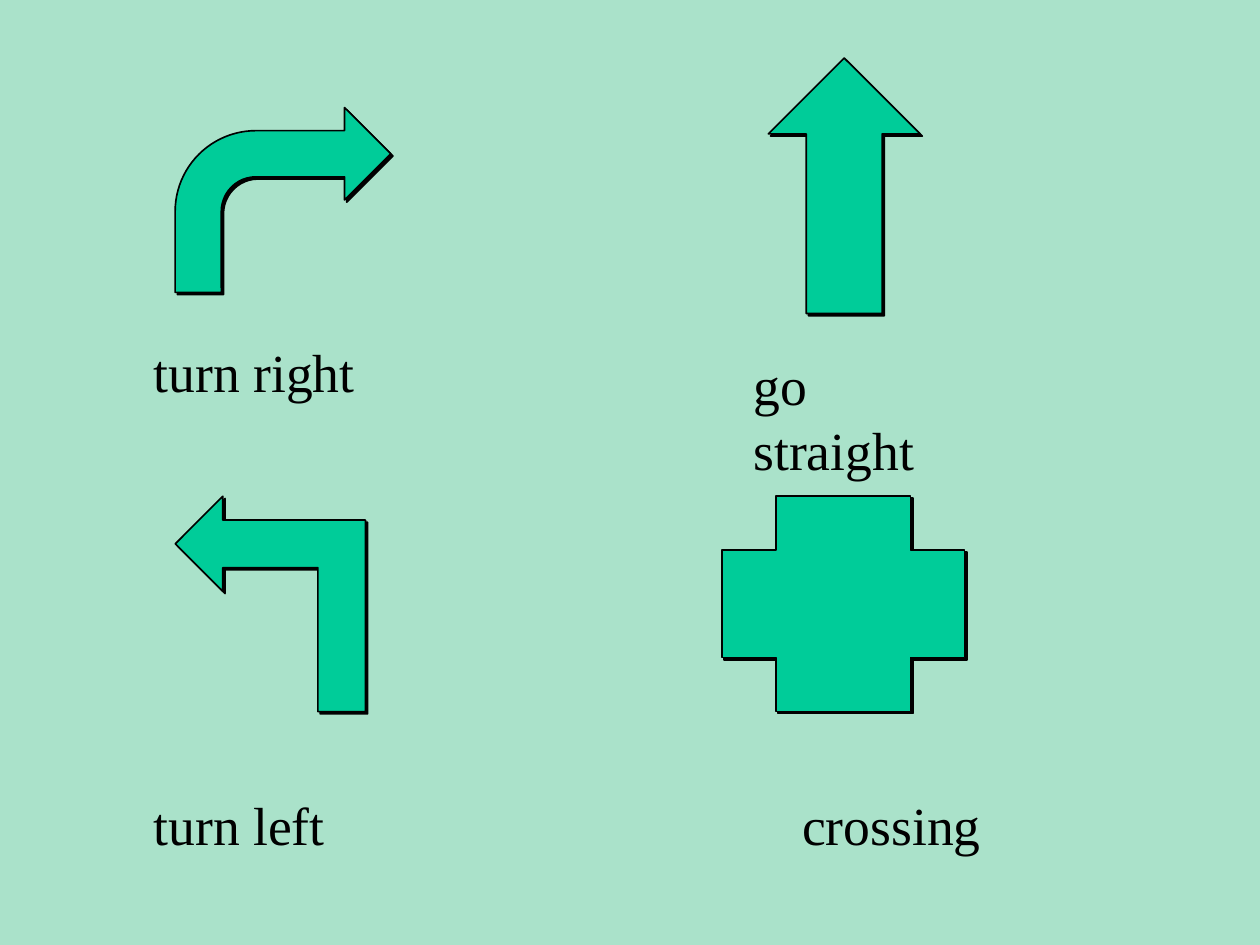
import pptx
import pptx.dml.color
import pptx.enum.shapes
import pptx.enum.text
import pptx.oxml
import pptx.oxml.ns
import pptx.util

Pt = pptx.util.Pt
SHAPES = pptx.enum.shapes.MSO_SHAPE
SHADOW = (
    f'<a:outerShdw {pptx.oxml.ns.nsdecls("a")} dist="17961" dir="2700000" '
    'algn="ctr" rotWithShape="0"><a:srgbClr val="000000"/></a:outerShdw>'
)


def paint(color_format, color):
    color_format.rgb = pptx.dml.color.RGBColor.from_string(color)


presentation = pptx.Presentation()
presentation.slide_width = Pt(564.5)
presentation.slide_height = Pt(423.4)
slide = presentation.slides.add_slide(presentation.slide_layouts[6])
slide.background.fill.solid()
paint(slide.background.fill.fore_color, "AAE2CA")

signs = [
    (SHAPES.BENT_ARROW, 78.5, 48.2, 96.6, 82.8, 0),
    (SHAPES.UP_ARROW, 344.2, 26, 68, 114.5, 0),
    (SHAPES.CROSS, 323.4, 222.3, 108.7, 96.5, 0),
    (SHAPES.BENT_UP_ARROW, 72.9, 228, 96.5, 85.2, 270),
]
for kind, left, top, width, height, rotation in signs:
    shape = slide.shapes.add_shape(kind, Pt(left), Pt(top), Pt(width), Pt(height))
    shape.rotation = rotation
    shape.fill.solid()
    paint(shape.fill.fore_color, "00CC99")
    paint(shape.line.color, "000000")
    shape.line.width = Pt(0.75)
    shape.shadow.inherit = False
    effects = shape.element.spPr.find(pptx.oxml.ns.qn("a:effectLst"))
    effects.append(pptx.oxml.parse_xml(SHADOW))
    if kind == SHAPES.CROSS:
        shape.adjustments[0] = 0.25

captions = [
    ("turn right", 61.8, 148.3, 129.6, True),
    ("go straight", 330.5, 154.3, 116, False),
    ("turn left", 61.8, 351.5, 91, False),
    ("crossing", 352.3, 351.5, 94.2, False),
]
for text, left, top, width, wraps in captions:
    caption = slide.shapes.add_textbox(Pt(left), Pt(top), Pt(width), Pt(36))
    frame = caption.text_frame
    frame.word_wrap = wraps
    frame.auto_size = pptx.enum.text.MSO_AUTO_SIZE.SHAPE_TO_FIT_TEXT
    paragraph = frame.paragraphs[0]
    paragraph.text = text
    paragraph.font.name = "Times New Roman"
    paragraph.font.size = Pt(24)
    paint(paragraph.font.color, "000000")

presentation.save("out.pptx")
